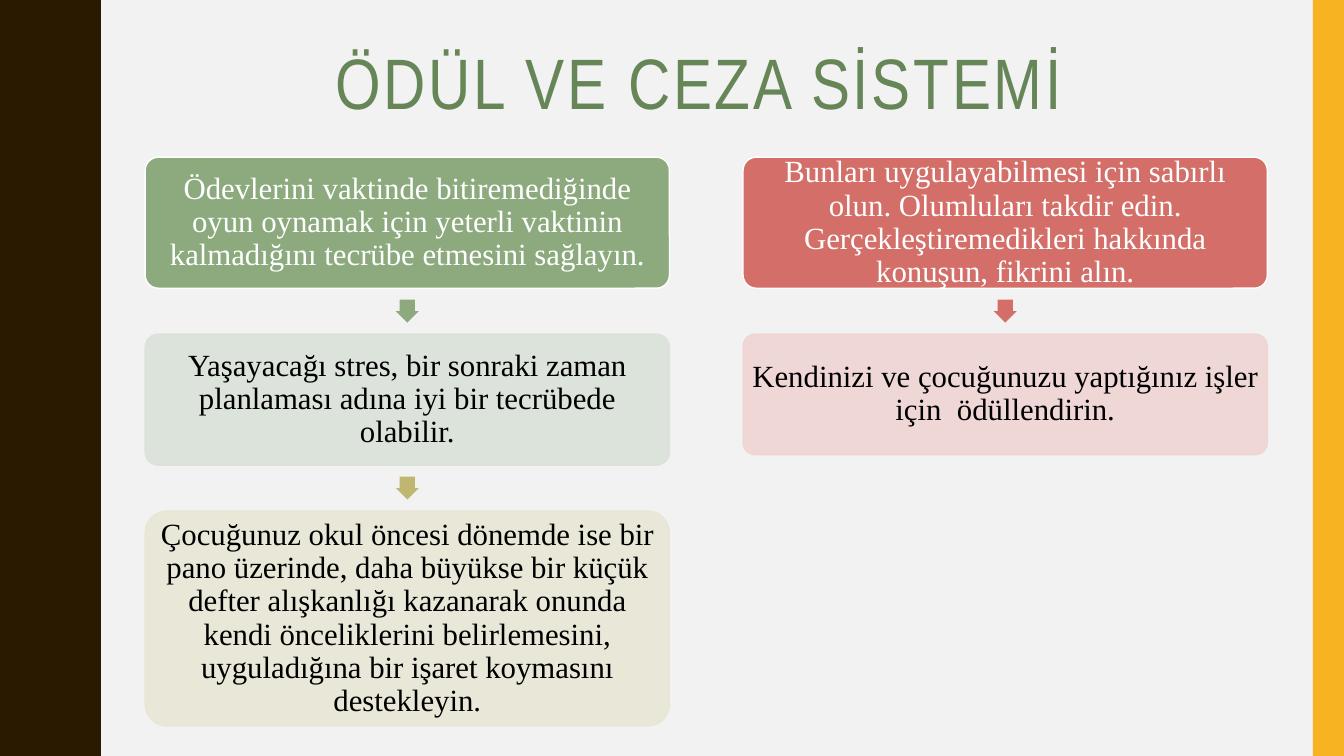
import dataclasses

import pptx
import pptx.dml.color
import pptx.enum.shapes
import pptx.enum.text
import pptx.oxml
import pptx.oxml.ns
import pptx.util

Inches = pptx.util.Inches
Shapes = pptx.enum.shapes.MSO_SHAPE
Anchor = pptx.enum.text.MSO_ANCHOR

SLIDE_WIDTH, SLIDE_HEIGHT = 13.33, 7.5
COLORS = {
    "background": "F2F2F2", "wave": "2A1A00", "stripe": "F8B323",
    "title": "678658", "white": "FFFFFF", "black": "000000",
    "green": "8CAA7E", "pale green": "DAE2D8",
    "olive": "BFB672", "pale olive": "E9E6D5",
    "red": "D36F68", "pale red": "EFD5D4",
}

# Grid of the two chains of boxes; gaps are shares of a row's height.
GRID_LEFT, GRID_TOP = 1.44, 1.56
COLUMN_WIDTH, COLUMN_PITCH = 5.2, 5.93
ROW_HEIGHT = 1.3
ROW_GAP = 0.35 * ROW_HEIGHT
ARROW_SIZE = ROW_GAP / 2

# Half a wave, from trough to crest; the other half mirrors it.
WAVE_LENGTH = SLIDE_HEIGHT / 5
HALF_WAVE = [
    (0.78, 0), (0.78, 0.07), (0.79, 0.14), (0.8, 0.2), (0.81, 0.25),
    (0.83, 0.29), (0.85, 0.33), (0.87, 0.38), (0.89, 0.42), (0.91, 0.46),
    (0.93, 0.5), (0.95, 0.55), (0.96, 0.61), (0.97, 0.68), (0.97, 0.75),
]


@dataclasses.dataclass(frozen=True)
class Step:
    text: str
    column: int
    row: int
    fill: str
    line: str
    font: str = "black"
    rows: float = 1
    opacity: int = 100
    arrow: str = ""


STEPS = [
    Step("Ödevlerini vaktinde bitiremediğinde oyun oynamak için yeterli vaktinin "
         "kalmadığını tecrübe etmesini sağlayın.",
         0, 0, "green", "white", font="white", arrow="green"),
    Step("Yaşayacağı stres, bir sonraki zaman planlaması adına iyi bir tecrübede olabilir.",
         0, 1, "pale green", "pale green", opacity=90, arrow="olive"),
    Step("Çocuğunuz okul öncesi dönemde ise bir pano üzerinde, daha büyükse bir küçük "
         "defter alışkanlığı kazanarak onunda kendi önceliklerini belirlemesini, "
         "uyguladığına bir işaret koymasını destekleyin.",
         0, 2, "pale olive", "pale olive", rows=1.64, opacity=90),
    Step("Bunları uygulayabilmesi için sabırlı olun. Olumluları takdir edin. "
         "Gerçekleştiremedikleri hakkında konuşun, fikrini alın.",
         1, 0, "red", "white", font="white", arrow="red"),
    Step("Kendinizi ve çocuğunuzu yaptığınız işler için  ödüllendirin.",
         1, 1, "pale red", "pale red", rows=0.92, opacity=90),
]


def rgb(name: str) -> pptx.dml.color.RGBColor:
    return pptx.dml.color.RGBColor.from_string(COLORS[name])


def paint(shape, fill: str, line: str = "", opacity: int = 100) -> None:
    shape.shadow.inherit = False
    shape.fill.solid()
    shape.fill.fore_color.rgb = rgb(fill)
    if line:
        shape.line.color.rgb = rgb(line)
        shape.line.width = pptx.util.Pt(1)
    else:
        shape.line.fill.background()
    if opacity < 100:
        for color in shape._element.spPr.iter(pptx.oxml.ns.qn("a:srgbClr")):
            alpha = pptx.oxml.parse_xml(
                f'<a:alpha {pptx.oxml.ns.nsdecls("a")} val="{opacity * 1000}"/>')
            color.append(alpha)


def add_shape(slide, kind, left: float, top: float, width: float, height: float):
    return slide.shapes.add_shape(
        kind, Inches(left), Inches(top), Inches(width), Inches(height))


def write(shape, text: str, font: str, size: float, color: str):
    """Write one centred paragraph and return its run."""
    frame = shape.text_frame
    frame.word_wrap = True
    frame.auto_size = pptx.enum.text.MSO_AUTO_SIZE.NONE
    paragraph = frame.paragraphs[0]
    paragraph.alignment = pptx.enum.text.PP_ALIGN.CENTER
    paragraph.line_spacing = 0.9
    run = paragraph.add_run()
    run.text = text
    run.font.name = font
    run.font.size = pptx.util.Pt(size)
    run.font.color.rgb = rgb(color)
    return run


def add_wave(slide) -> None:
    period = HALF_WAVE + [(x, WAVE_LENGTH - y) for x, y in HALF_WAVE[-2::-1]]
    edge = [(x, y + WAVE_LENGTH * wave) for wave in range(5) for x, y in period]
    builder = slide.shapes.build_freeform(0, 0, scale=Inches(1))
    builder.add_line_segments(edge + [(0, SLIDE_HEIGHT)], close=True)
    paint(builder.convert_to_shape(), "wave")


def add_title(slide) -> None:
    title = slide.shapes.title
    title.left, title.top = Inches(1.37), Inches(0.42)
    title.width, title.height = Inches(11.13), Inches(1.63)
    title.text_frame.vertical_anchor = Anchor.TOP
    run = write(title, "ÖDÜL VE CEZA SİSTEMİ", "Arial Narrow", 51, "title")
    run.font._element.set("spc", "200")


def add_step(slide, step: Step) -> None:
    left = GRID_LEFT + step.column * COLUMN_PITCH
    top = GRID_TOP + step.row * (ROW_HEIGHT + ROW_GAP)
    height = step.rows * ROW_HEIGHT
    box = add_shape(slide, Shapes.ROUNDED_RECTANGLE, left, top, COLUMN_WIDTH, height)
    box.adjustments[0] = 0.1
    paint(box, step.fill, step.line, step.opacity)
    frame = box.text_frame
    frame.vertical_anchor = Anchor.MIDDLE
    frame.margin_left = frame.margin_right = Inches(0.03)
    frame.margin_top = frame.margin_bottom = Inches(0.03)
    write(box, step.text, "Times New Roman", 22, step.font)
    if step.arrow:
        arrow = add_shape(slide, Shapes.DOWN_ARROW,
                          left + (COLUMN_WIDTH - ARROW_SIZE) / 2,
                          top + height + (ROW_GAP - ARROW_SIZE) / 2,
                          ARROW_SIZE, ARROW_SIZE)
        arrow.adjustments[0] = 0.67
        arrow.adjustments[1] = 0.5
        paint(arrow, step.arrow)


def main() -> None:
    presentation = pptx.Presentation()
    presentation.slide_width = Inches(SLIDE_WIDTH)
    presentation.slide_height = Inches(SLIDE_HEIGHT)
    slide = presentation.slides.add_slide(presentation.slide_layouts[5])
    slide.background.fill.solid()
    slide.background.fill.fore_color.rgb = rgb("background")
    add_wave(slide)
    stripe = add_shape(slide, Shapes.RECTANGLE, 13.02, 0, SLIDE_WIDTH - 13.02, SLIDE_HEIGHT)
    paint(stripe, "stripe")
    add_title(slide)
    for step in STEPS:
        add_step(slide, step)
    presentation.save("out.pptx")


if __name__ == "__main__":
    main()
